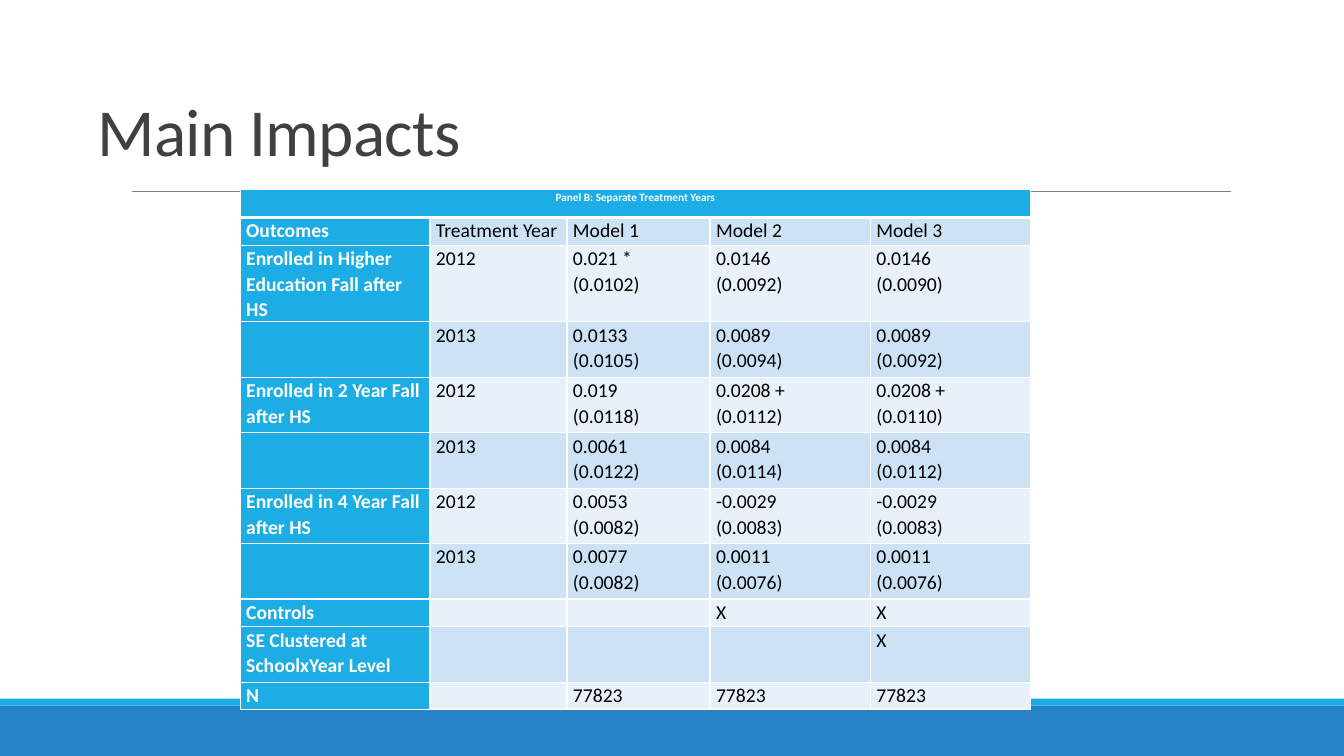
from lxml.etree import SubElement
from pptx import Presentation
from pptx.dml.color import RGBColor
from pptx.enum.shapes import MSO_CONNECTOR as Connector, MSO_SHAPE as Shape
from pptx.enum.text import MSO_ANCHOR as Anchor, PP_ALIGN as Align
from pptx.oxml import parse_xml
from pptx.oxml.ns import nsdecls, qn
from pptx.util import Pt

HEADING = "Main Impacts"
PANEL = "Panel B: Separate Treatment Years"
RESULTS = [
    ("Outcomes", "Treatment Year", "Model 1", "Model 2", "Model 3"),
    ("Enrolled in Higher Education Fall after HS", "2012",
     "0.021 *\n(0.0102)", "0.0146\n(0.0092)", "0.0146\n(0.0090)"),
    ("", "2013", "0.0133\n(0.0105)", "0.0089\n(0.0094)", "0.0089\n(0.0092)"),
    ("Enrolled in 2 Year Fall after HS", "2012",
     "0.019\n(0.0118)", "0.0208 +\n(0.0112)", "0.0208 +\n(0.0110)"),
    ("", "2013", "0.0061\n(0.0122)", "0.0084\n(0.0114)", "0.0084\n(0.0112)"),
    ("Enrolled in 4 Year Fall after HS", "2012",
     "0.0053\n(0.0082)", "-0.0029\n(0.0083)", "-0.0029\n(0.0083)"),
    ("", "2013", "0.0077\n(0.0082)", "0.0011\n(0.0076)", "0.0011\n(0.0076)"),
    ("Controls", "", "", "X", "X"),
    ("SE Clustered at SchoolxYear Level", "", "", "", "X"),
    ("N", "", "77823", "77823", "77823"),
]
ROWS = [(PANEL, "", "", "", "")] + RESULTS
COLUMN_WIDTHS = [135.5, 97.9, 102.2, 114.5, 114.5]
SINGLE, DOUBLE = 19.8, 39.6
ROW_HEIGHTS = [SINGLE] * 2 + [DOUBLE] * 6 + [SINGLE, DOUBLE, SINGLE]
FOOTER_BARS = [(504, 36, "2683C6"), (499, 5, "1CADE4")]
WIDTH, HEIGHT = 960, 540
ACCENT, BANDS = "1CADE4", ("E8F1FA", "CDE3F5")

CELL_FORMAT = {"margin_left": Pt(4.3), "margin_right": Pt(4.3),
               "margin_top": 0, "margin_bottom": 0, "vertical_anchor": Anchor.TOP}
TITLE_BOX = {"left": Pt(62.6), "top": Pt(10.8), "width": Pt(792), "height": Pt(114.5)}


def color(value):
    return RGBColor.from_string(value)


def apply(target, values):
    for name, value in values.items():
        setattr(target, name, value)


def set_font(font, size, shade, bold=False):
    apply(font, {"name": "Calibri", "size": Pt(size), "bold": bold})
    font.color.rgb = color(shade)


def set_borders(cell, row):
    weights = {"L": 1, "R": 1, "T": 3 if row == 1 else 1, "B": 3 if row == 0 else 1}
    properties = cell._tc.get_or_add_tcPr()
    for position, (side, weight) in enumerate(weights.items()):
        properties.insert(position, parse_xml(
            f'<a:ln{side} {nsdecls("a")} w="{Pt(weight)}"><a:solidFill>'
            f'<a:srgbClr val="FFFFFF"/></a:solidFill></a:ln{side}>'))


def fill_cell(cell, row, column, content):
    heading = row == 0 or column == 0
    size = 8 if row == 0 else 14
    apply(cell, CELL_FORMAT)
    cell.fill.solid()
    cell.fill.fore_color.rgb = color(ACCENT if heading else BANDS[row % 2])
    set_borders(cell, row)
    cell.text = content
    for paragraph in cell.text_frame.paragraphs:
        apply(paragraph, {"line_spacing": 1.07,
                          "alignment": Align.CENTER if row == 0 else Align.LEFT})
        for run in paragraph.runs:
            set_font(run.font, size, "FFFFFF" if heading else "000000", heading)
        if not content:
            SubElement(paragraph._p, qn("a:endParaRPr"), sz=str(size * 100))


def add_frame(slide):
    for top, height, shade in FOOTER_BARS:
        bar = slide.shapes.add_shape(Shape.RECTANGLE, 0, Pt(top), Pt(WIDTH), Pt(height))
        bar.shadow.inherit = False
        bar.fill.solid()
        bar.fill.fore_color.rgb = color(shade)
        bar.line.fill.background()
    rule = slide.shapes.add_connector(Connector.STRAIGHT, Pt(94.3), Pt(136.8), Pt(879), Pt(136.8))
    rule.line.width = Pt(0.5)
    rule.line.color.rgb = color("808080")
    SubElement(rule._element.spPr, qn("a:effectLst"))


def add_title(slide):
    title = slide.shapes.title
    apply(title, TITLE_BOX)
    title.text = HEADING
    apply(title.text_frame, {"vertical_anchor": Anchor.BOTTOM, "word_wrap": True})
    paragraph = title.text_frame.paragraphs[0]
    apply(paragraph, {"alignment": Align.LEFT, "line_spacing": 0.85})
    run = paragraph.runs[0]
    set_font(run.font, 48, "404040")
    run.font._element.set("spc", "-50")


def add_results(slide):
    results = slide.shapes.add_table(
        len(ROWS), len(COLUMN_WIDTHS), Pt(171.6), Pt(135.6),
        Pt(sum(COLUMN_WIDTHS)), Pt(sum(ROW_HEIGHTS))).table
    apply(results, {"first_row": False, "horz_banding": False})
    for column, width in zip(results.columns, COLUMN_WIDTHS):
        column.width = Pt(width)
    for row, height in zip(results.rows, ROW_HEIGHTS):
        row.height = Pt(height)
    for r, contents in enumerate(ROWS):
        for c, content in enumerate(contents):
            fill_cell(results.cell(r, c), r, c, content)
    results.cell(0, 0).merge(results.cell(0, len(COLUMN_WIDTHS) - 1))


def main():
    deck = Presentation()
    apply(deck, {"slide_width": Pt(WIDTH), "slide_height": Pt(HEIGHT)})
    slide = deck.slides.add_slide(deck.slide_layouts[5])
    add_frame(slide)
    add_title(slide)
    add_results(slide)
    deck.save("out.pptx")


if __name__ == "__main__":
    main()
